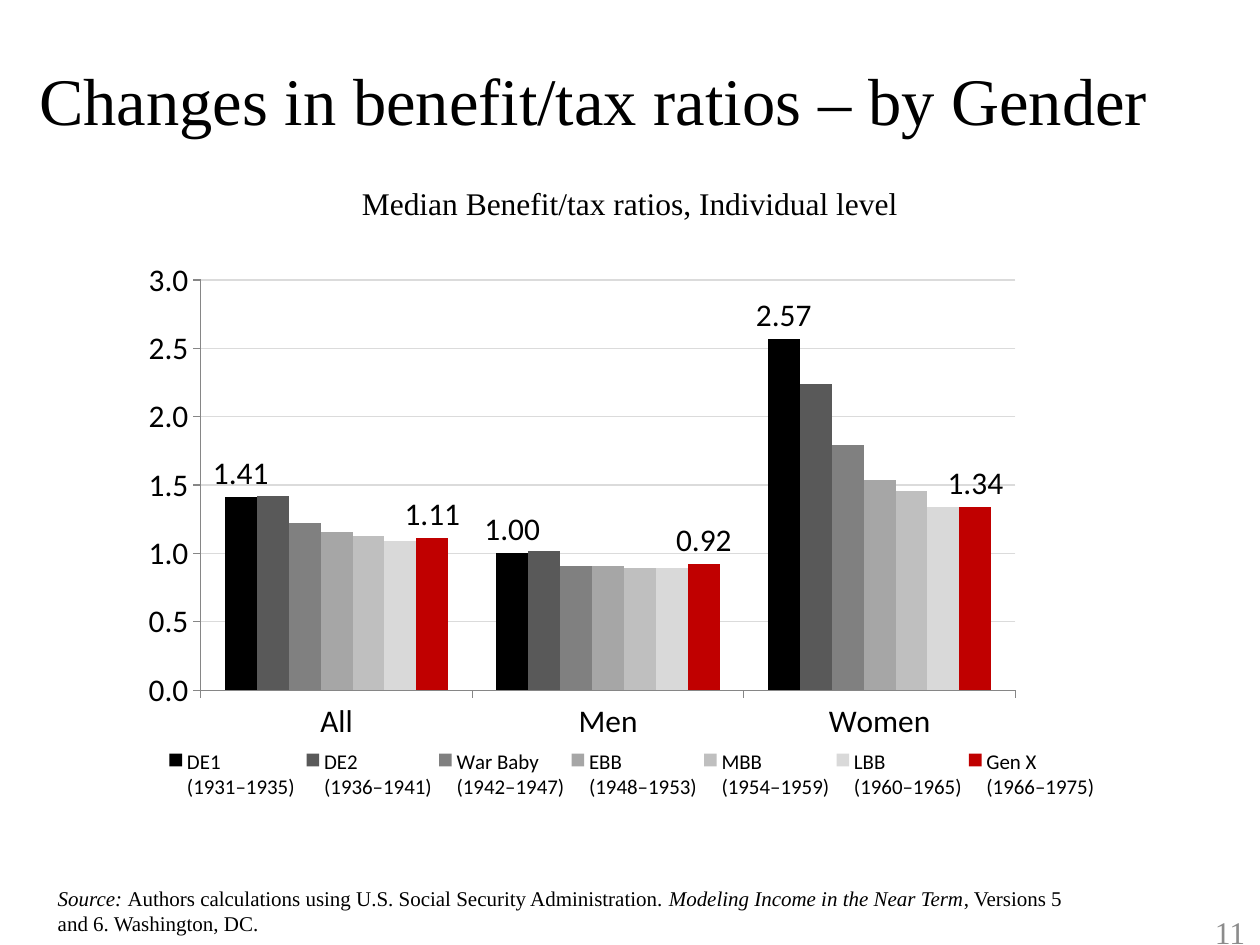
from dataclasses import dataclass

from lxml.etree import SubElement
from pptx import Presentation
from pptx.chart.data import CategoryChartData
from pptx.dml.color import RGBColor
from pptx.enum.chart import XL_CHART_TYPE as ChartType, XL_LABEL_POSITION as LabelPosition
from pptx.enum.chart import XL_LEGEND_POSITION as LegendPosition, XL_TICK_MARK as TickMark
from pptx.enum.text import MSO_ANCHOR as Anchor, PP_ALIGN as Align
from pptx.oxml.ns import qn
from pptx.util import Inches, Pt


@dataclass(frozen=True)
class Theme:
    text_font: str = "Times New Roman"
    chart_font: str = "Calibri"
    ink: str = "000000"
    muted: str = "8C8C8C"
    axis: str = "868686"
    grid: str = "DBDBDB"
    title: int = 38
    body: int = 18
    small: int = 12


THEME = Theme()
TITLE = [[("Changes in benefit/tax ratios – by Gender", False)]]
SUBTITLE = [[("Median Benefit/tax ratios, Individual level", False)]]
PAGE_NUMBER = [[("11", False)]]
SOURCE = [
    [
        ("Source: ", True),
        ("Authors calculations using U.S. Social Security Administration.\u00a0", False),
        ("Modeling Income in the Near Term", True),
        (", Versions 5 ", False),
    ],
    [("and 6. Washington, DC.", False)],
]
GENDERS = ["All", "Men", "Women"]
COHORTS = [
    ("DE1 \n(1931–1935) ", (1.41, 1.00, 2.57), "000000", True),
    ("DE2 \n(1936–1941)", (1.42, 1.02, 2.24), "595959", False),
    ("War Baby\n(1942–1947)", (1.22, 0.91, 1.79), "808080", False),
    ("EBB \n(1948–1953)", (1.16, 0.91, 1.54), "A6A6A6", False),
    ("MBB \n(1954–1959)", (1.13, 0.89, 1.46), "BFBFBF", False),
    ("LBB \n(1960–1965)", (1.09, 0.89, 1.34), "D9D9D9", False),
    ("Gen X\n(1966–1975)", (1.11, 0.92, 1.34), "C00000", True),
]
PLOT_AREA = (0.05, 0.05, 0.85, 0.73)
LEGEND_AREA = (0.01, 0.87, 0.98, 0.12)


def style_font(font, name, size, color=THEME.ink):
    font.name = name
    font.size = Pt(size)
    font.color.rgb = RGBColor.from_string(color)


def add_text(slide, box, lines, size, color=THEME.ink, align=Align.LEFT, anchor=Anchor.TOP, indent=0):
    shape = slide.shapes.add_textbox(*map(Inches, box))
    frame = shape.text_frame
    frame.word_wrap = True
    frame.vertical_anchor = anchor
    frame.margin_left = Inches(0.1 + indent)
    paragraph = frame.paragraphs[0]
    paragraph.alignment = align
    for index, runs in enumerate(lines):
        if index:
            paragraph.add_line_break()
        for text, italic in runs:
            run = paragraph.add_run()
            run.text = text
            style_font(run.font, THEME.text_font, size, color)
            run.font.italic = italic


def set_layout(element, area, inner=False):
    layout = element.find(qn("c:layout"))
    if layout is None:
        layout = SubElement(element, qn("c:layout"))
        anchor = element.find(qn("c:legendPos"))
        if anchor is None:
            element.insert(0, layout)
        else:
            anchor.addnext(layout)
    manual = SubElement(layout, qn("c:manualLayout"))
    settings = [("layoutTarget", "inner")] if inner else []
    settings += [("xMode", "edge"), ("yMode", "edge"), *zip("xywh", area)]
    for tag, value in settings:
        SubElement(manual, qn(f"c:{tag}")).set("val", str(value))


def style_axis(axis):
    axis.major_tick_mark = TickMark.OUTSIDE
    axis.minor_tick_mark = TickMark.NONE
    axis.format.line.color.rgb = RGBColor.from_string(THEME.axis)
    axis.format.line.width = Pt(0.75)
    style_font(axis.tick_labels.font, THEME.chart_font, THEME.body)


def add_ratio_chart(slide, box):
    data = CategoryChartData(number_format="0.00")
    data.categories = GENDERS
    for name, values, _, _ in COHORTS:
        data.add_series(name, values)
    chart = slide.shapes.add_chart(ChartType.COLUMN_CLUSTERED, *map(Inches, box), data).chart
    chart.has_title = False
    style_font(chart.font, THEME.chart_font, THEME.body)

    plot = chart.plots[0]
    plot.gap_width = 150
    plot.overlap = 0
    plot.vary_by_categories = False
    for series, (_, _, color, labelled) in zip(plot.series, COHORTS):
        series.format.fill.solid()
        series.format.fill.fore_color.rgb = RGBColor.from_string(color)
        if labelled:
            labels = series.data_labels
            labels.show_value = True
            labels.position = LabelPosition.OUTSIDE_END
            labels.number_format = "0.00"
            labels.number_format_is_linked = False
            style_font(labels.font, THEME.chart_font, THEME.body)

    style_axis(chart.category_axis)
    ratio_axis = chart.value_axis
    style_axis(ratio_axis)
    ratio_axis.minimum_scale = 0
    ratio_axis.maximum_scale = 3
    ratio_axis.major_unit = 0.5
    ratio_axis.tick_labels.number_format = "0.0"
    ratio_axis.tick_labels.number_format_is_linked = False
    ratio_axis.has_major_gridlines = True
    grid = ratio_axis.major_gridlines.format.line
    grid.color.rgb = RGBColor.from_string(THEME.grid)
    grid.width = Pt(0.75)

    chart.has_legend = True
    legend = chart.legend
    legend.position = LegendPosition.RIGHT
    legend.include_in_layout = False
    style_font(legend.font, THEME.chart_font, THEME.small)
    root = chart.element
    set_layout(root.find(".//" + qn("c:plotArea")), PLOT_AREA, inner=True)
    set_layout(root.find(".//" + qn("c:legend")), LEGEND_AREA)


def main():
    presentation = Presentation()
    presentation.slide_width = Inches(10)
    presentation.slide_height = Inches(7.5)
    slide = presentation.slides.add_slide(presentation.slide_layouts[6])
    add_text(slide, (0.15, 0.41, 9.85, 0.75), TITLE, THEME.title, anchor=Anchor.MIDDLE, indent=0.06)
    add_text(slide, (7.9, 7.15, 2.08, 0.5), PAGE_NUMBER, THEME.body, THEME.muted, Align.RIGHT, Anchor.MIDDLE)
    add_text(slide, (0, 1.41, 10, 0.4), SUBTITLE, THEME.body, align=Align.CENTER)
    add_text(slide, (0.36, 6.98, 8.61, 0.5), SOURCE, THEME.small)
    add_ratio_chart(slide, (1.18, 2, 7.64, 4.46))
    presentation.save("out.pptx")


if __name__ == "__main__":
    main()
